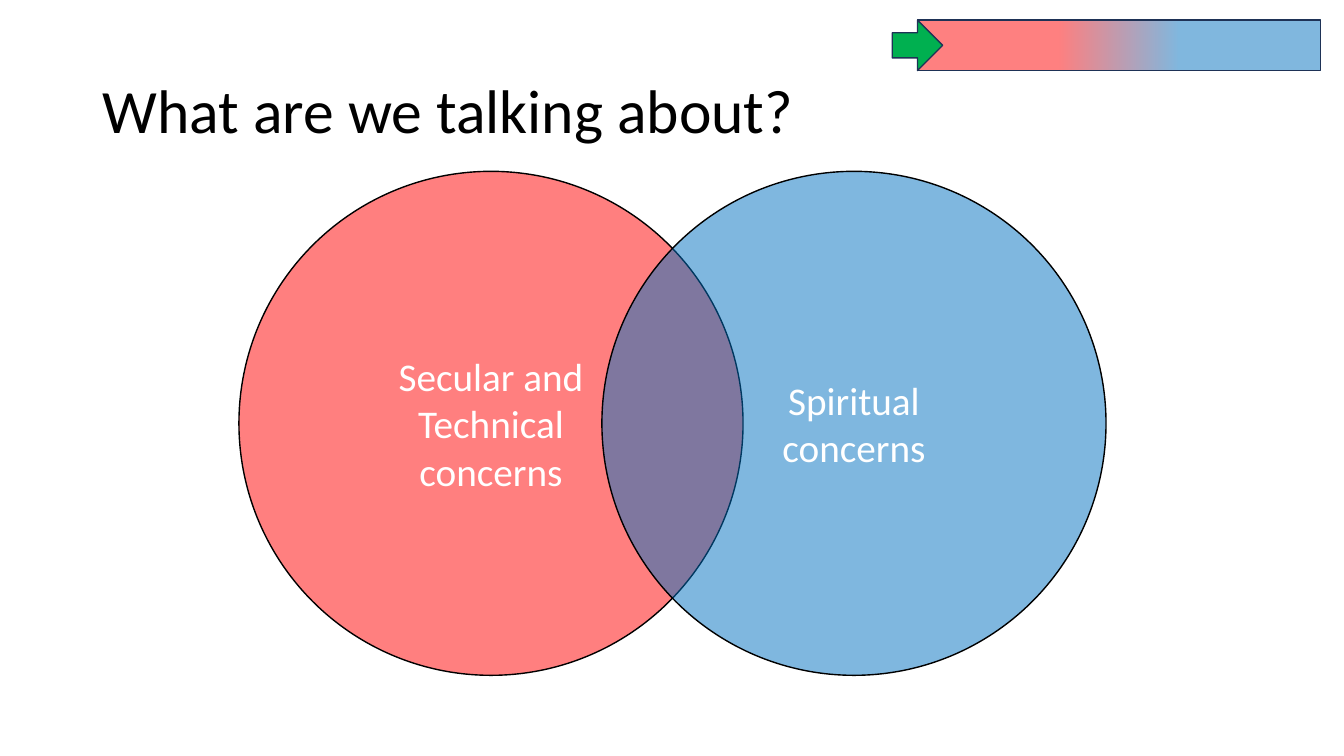
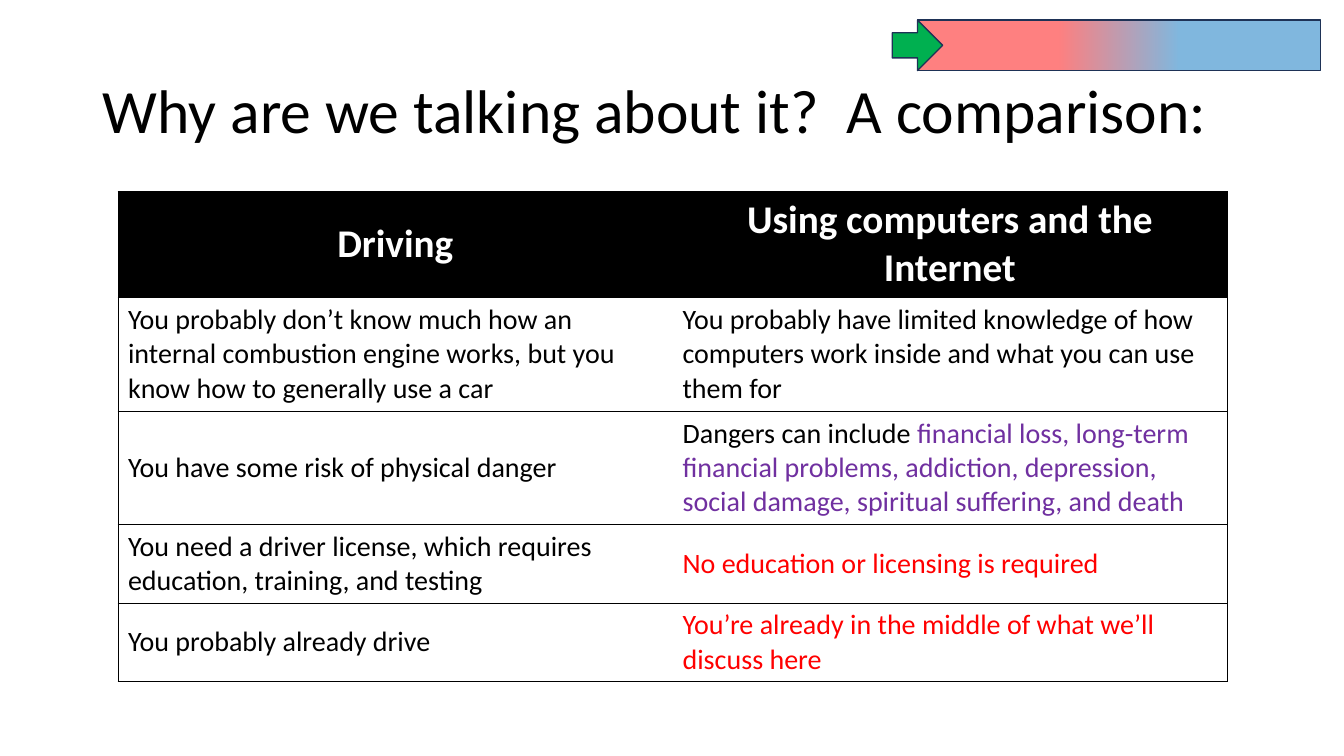
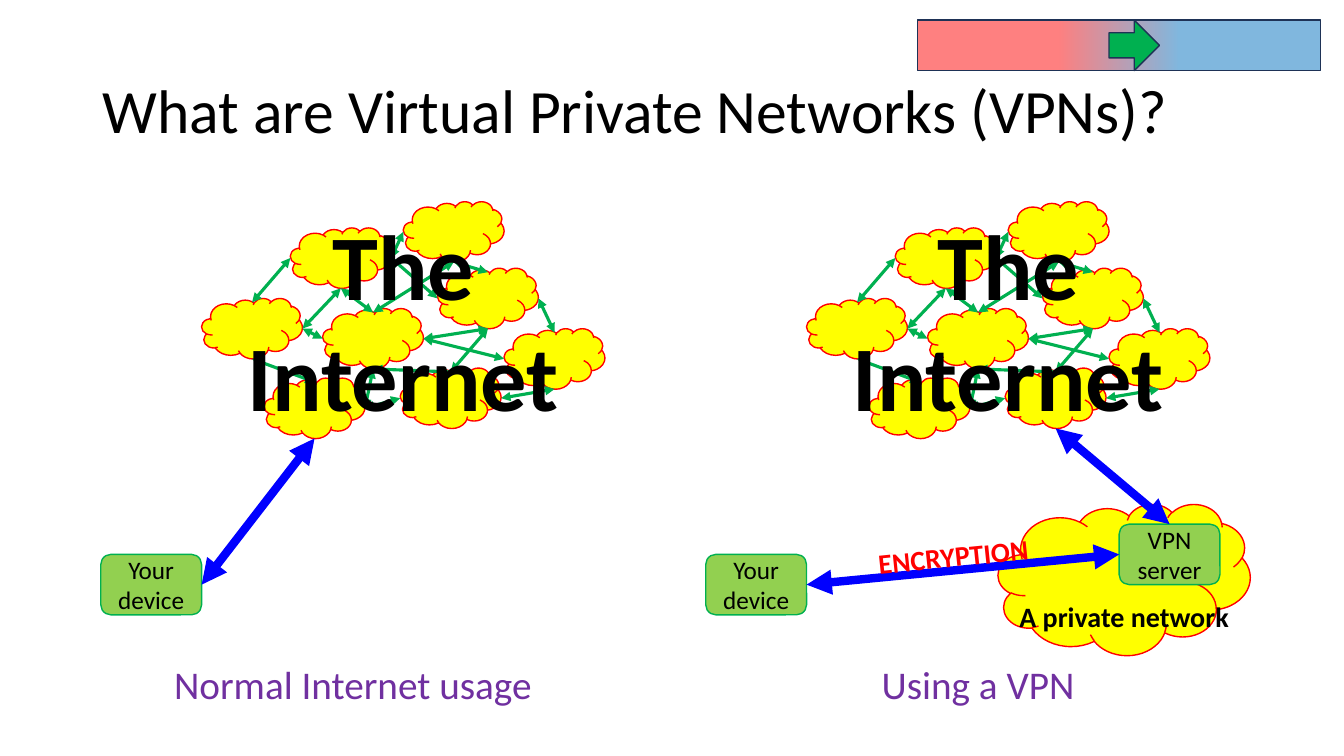
from lxml import etree
from pptx import Presentation
from pptx.dml.color import RGBColor
from pptx.enum.shapes import MSO_CONNECTOR, MSO_SHAPE
from pptx.enum.text import MSO_ANCHOR, MSO_AUTO_SIZE, PP_ALIGN
from pptx.oxml.ns import qn
from pptx.util import Inches, Pt

RECT, ROUND, OVAL = MSO_SHAPE.RECTANGLE, MSO_SHAPE.ROUNDED_RECTANGLE, MSO_SHAPE.OVAL
CLOUD, ARROW = MSO_SHAPE.CLOUD, MSO_SHAPE.RIGHT_ARROW
STRAIGHT = MSO_CONNECTOR.STRAIGHT
MIDDLE, TOP_ANCHOR = MSO_ANCHOR.MIDDLE, MSO_ANCHOR.TOP
GROW, NO_FIT = MSO_AUTO_SIZE.SHAPE_TO_FIT_TEXT, MSO_AUTO_SIZE.NONE
LEFT, CENTER = PP_ALIGN.LEFT, PP_ALIGN.CENTER

FONT = "Calibri"
BLACK = RGBColor(0x00, 0x00, 0x00)
WHITE = RGBColor(0xFF, 0xFF, 0xFF)
RED = RGBColor(0xFF, 0x00, 0x00)
BLUE = RGBColor(0x00, 0x70, 0xC0)
NAVY = RGBColor(0x1E, 0x32, 0x56)
GREEN = RGBColor(0x00, 0xB0, 0x50)
LIME = RGBColor(0x92, 0xD0, 0x50)
YELLOW = RGBColor(0xFF, 0xFF, 0x00)
PURPLE = RGBColor(0x70, 0x30, 0xA0)
ROYAL = RGBColor(0x00, 0x00, 0xFF)

# Content: title and place of the progress arrow on each slide
TITLES = [
    ("What are we talking about?", 8.85),
    ("Why are we talking about it?  A comparison:", 8.85),
    ("What are Virtual Private Networks (VPNs)?", 11),
]
STOPS = [(0, RED), (35, RED), (65, BLUE), (100, BLUE)]

CIRCLES = [
    (2.37, "Secular and\nTechnical\nconcerns", RED),
    (5.97, "Spiritual\nconcerns", BLUE),
]

# Each cell is a list of (text, colour) runs
ROWS = [
    (1.05, [("Driving", WHITE)], [("Using computers and the Internet", WHITE)]),
    (1.13, [("You probably don’t know much how an internal combustion engine "
             "works, but you know how to generally use a car", BLACK)],
     [("You probably have limited knowledge of how computers work inside "
       "and what you can use them for", BLACK)]),
    (1.12, [("You have some risk of physical danger", BLACK)],
     [("Dangers can include ", BLACK),
      ("financial loss, long-term financial problems, addiction, depression, "
       "social damage, spiritual suffering, and death", PURPLE)]),
    (0.78, [("You need a driver license, which requires education, training, "
             "and testing", BLACK)],
     [("No education or licensing is required", RED)]),
    (0.78, [("You probably already drive", BLACK)],
     [("You’re already in the middle of what we’ll discuss here", RED)]),
]

# Clouds of the net, and links from a cloud's side to another cloud's side
CLOUDS = {
    "a": (2.62, 3.75), "b": (2, 2.96), "c": (3.2, 3.06), "d": (2.88, 2.26),
    "e": (3.97, 3.65), "f": (5, 3.26), "g": (4.34, 2.66), "h": (4, 2),
}
LINKS = ("aT-bB bT-dL cT-dB hL-dR hB-gT cR-gB dR-gL aR-cB aR-eL "
         "bR-cL gR-fT eR-fB cR-fL bR-dB eT-gB cT-hB eT-cB").split()
SIDES = {"T": (0.5, 0.04), "L": (0, 0.3), "B": (0.5, 0.6), "R": (1, 0.3)}
TOP, RIGHT, WEST = 0, 3, 1
NODE = (1, 0.6)
SHIFT = 6


def place(*box):
    return [Inches(round(n, 2)) for n in box]


def style(frame, size, color, bold=False, align=CENTER):
    for para in frame.paragraphs:
        para.alignment = align
        for run in para.runs:
            font = run.font
            font.name, font.size, font.bold = FONT, Pt(size), bold
            font.color.rgb = color


def fade(parent):
    for color in parent.iter(qn("a:srgbClr")):
        etree.SubElement(color, qn("a:alpha"), val="50000")


def shape(slide, kind, box, fill, line, text="", size=18, color=BLACK):
    item = slide.shapes.add_shape(kind, *place(*box))
    item.shadow.inherit = False
    item.fill.solid()
    item.fill.fore_color.rgb = fill
    item.line.color.rgb = line
    item.line.width = Pt(1)
    if text:
        item.text_frame.text = text
        item.text_frame.vertical_anchor = MIDDLE
        style(item.text_frame, size, color)
    return item


def label(slide, box, text, size, color, bold=False):
    item = slide.shapes.add_textbox(*place(*box))
    frame = item.text_frame
    frame.text = text
    frame.word_wrap = False
    frame.auto_size = GROW
    frame.vertical_anchor = TOP_ANCHOR
    style(frame, size, color, bold)
    return item


def link(slide, start, end, color, width):
    line = slide.shapes.add_connector(STRAIGHT, *place(*start, *end))
    line.line.color.rgb = color
    line.line.width = Pt(width)
    props = line.line._get_or_add_ln()
    for tag in ("a:headEnd", "a:tailEnd"):
        etree.SubElement(props, qn(tag), type="triangle")
    etree.SubElement(line._element.spPr, qn("a:effectLst"))
    return line


def start(deck, title, spot):
    """Add a slide with its title, the colour bar and the arrow."""
    slide = deck.slides.add_slide(deck.slide_layouts[5])
    head = slide.shapes.title
    head.left, head.top, head.width, head.height = place(0.92, 0.4, 11.5, 1.45)
    frame = head.text_frame
    frame.text = title
    frame.auto_size = NO_FIT
    frame.vertical_anchor = MIDDLE
    style(frame, 44, BLACK, align=LEFT)
    frame.paragraphs[0].line_spacing = 0.9

    bar = shape(slide, RECT, (9.1, 0.2, 4, 0.5), WHITE, NAVY)
    bar.fill.gradient()
    bar.fill.gradient_angle = 0
    stops = bar._element.spPr.find(".//" + qn("a:gsLst"))
    stops.clear()
    for pos, color in STOPS:
        stop = etree.SubElement(stops, qn("a:gs"), pos=str(pos * 1000))
        etree.SubElement(stop, qn("a:srgbClr"), val=str(color))
    fade(stops)
    return slide, lambda: shape(slide, ARROW, (spot, 0.2, 0.5, 0.5), GREEN, NAVY)


def venn(slide):
    for left, text, fill in CIRCLES:
        disc = shape(slide, OVAL, (left, 1.7, 5, 5), fill, BLACK, text, 28, WHITE)
        fade(disc._element.spPr.find(qn("a:solidFill")))


def border(cell, sides):
    props = cell._tc.get_or_add_tcPr()
    for spot, side in enumerate(sides):
        edge = etree.Element(qn("a:ln" + side), w=str(Pt(0.5)))
        fill = etree.SubElement(edge, qn("a:solidFill"))
        etree.SubElement(fill, qn("a:srgbClr"), val=str(BLACK))
        props.insert(spot, edge)


def compare(slide):
    high = sum(row[0] for row in ROWS)
    table = slide.shapes.add_table(
        len(ROWS), 2, *place(1.17, 1.9, 11, high)).table
    props = table._tbl.tblPr
    props.find(qn("a:tableStyleId")).text = "{2D5ABB26-0587-4C30-8999-92F81FD0307C}"
    table.horz_banding = False
    for r, (tall, *cells) in enumerate(ROWS):
        table.rows[r].height = Inches(tall)
        for c, runs in enumerate(cells):
            cell = table.cell(r, c)
            cell.vertical_anchor = MIDDLE
            para = cell.text_frame.paragraphs[0]
            para.alignment = LEFT if r else CENTER
            for text, color in runs:
                run = para.add_run()
                run.text = text
                font = run.font
                font.name, font.size = FONT, Pt(20 if r else 28)
                font.bold, font.color.rgb = r == 0, color
            if r:
                cell.fill.background()
            else:
                cell.fill.solid()
                cell.fill.fore_color.rgb = BLACK
            border(cell, ("R" if c else "L", "T", "B"))


def port(name, side, dx):
    (x, y), (w, h) = CLOUDS[name], SIDES[side]
    return x + w + dx, y + h


def net(slide, dx):
    """Draw a device and the Internet; return the device."""
    device = shape(slide, ROUND, (1 + dx, 5.5, *NODE), LIME, GREEN, "Your device")
    for x, y in CLOUDS.values():
        shape(slide, CLOUD, (x + dx, y, *NODE), YELLOW, RED)
    for pair in LINKS:
        ends = [port(*end, dx) for end in pair.split("-")]
        link(slide, *ends, GREEN, 2.25)
    label(slide, (2.34 + dx, 2.02, 3.32, 2.32), "The\vInternet", 66, BLACK, True)
    return device


def vpn(slide):
    # Normal usage
    device = net(slide, 0)
    line = link(slide, (2, 5.8), port("a", "B", 0), ROYAL, 6)
    line.begin_connect(device, RIGHT)
    label(slide, (1.61, 6.5, 3.78, 0.57), "Normal Internet usage", 28, PURPLE)

    # Through a private network
    device = net(slide, SHIFT)
    shape(slide, CLOUD, (9.9, 5, 2.5, 1.5), YELLOW, RED)
    label(slide, (10, 5.9, 2.3, 0.44), "A private network", 20, BLACK, True)
    server = shape(slide, ROUND, (11.1, 5.2, *NODE), LIME, GREEN, "VPN server")
    line = link(slide, (8, 5.8), (11.1, 5.5), ROYAL, 6)
    line.begin_connect(device, RIGHT)
    line.end_connect(server, WEST)
    line = link(slide, port("e", "B", SHIFT), (11.6, 5.2), ROYAL, 6)
    line.end_connect(server, TOP)
    note = label(slide, (8.6, 5.3, 1.71, 0.44), "ENCRYPTION", 20, RED, True)
    note.rotation = 354.2
    label(slide, (8.63, 6.5, 2.14, 0.57), "Using a VPN", 28, PURPLE)


def main():
    deck = Presentation()
    deck.slide_width, deck.slide_height = place(13.33, 7.5)
    for (title, spot), draw in zip(TITLES, (venn, compare, vpn)):
        slide, mark = start(deck, title, spot)
        draw(slide)
        mark()
    deck.save("out.pptx")


if __name__ == "__main__":
    main()
